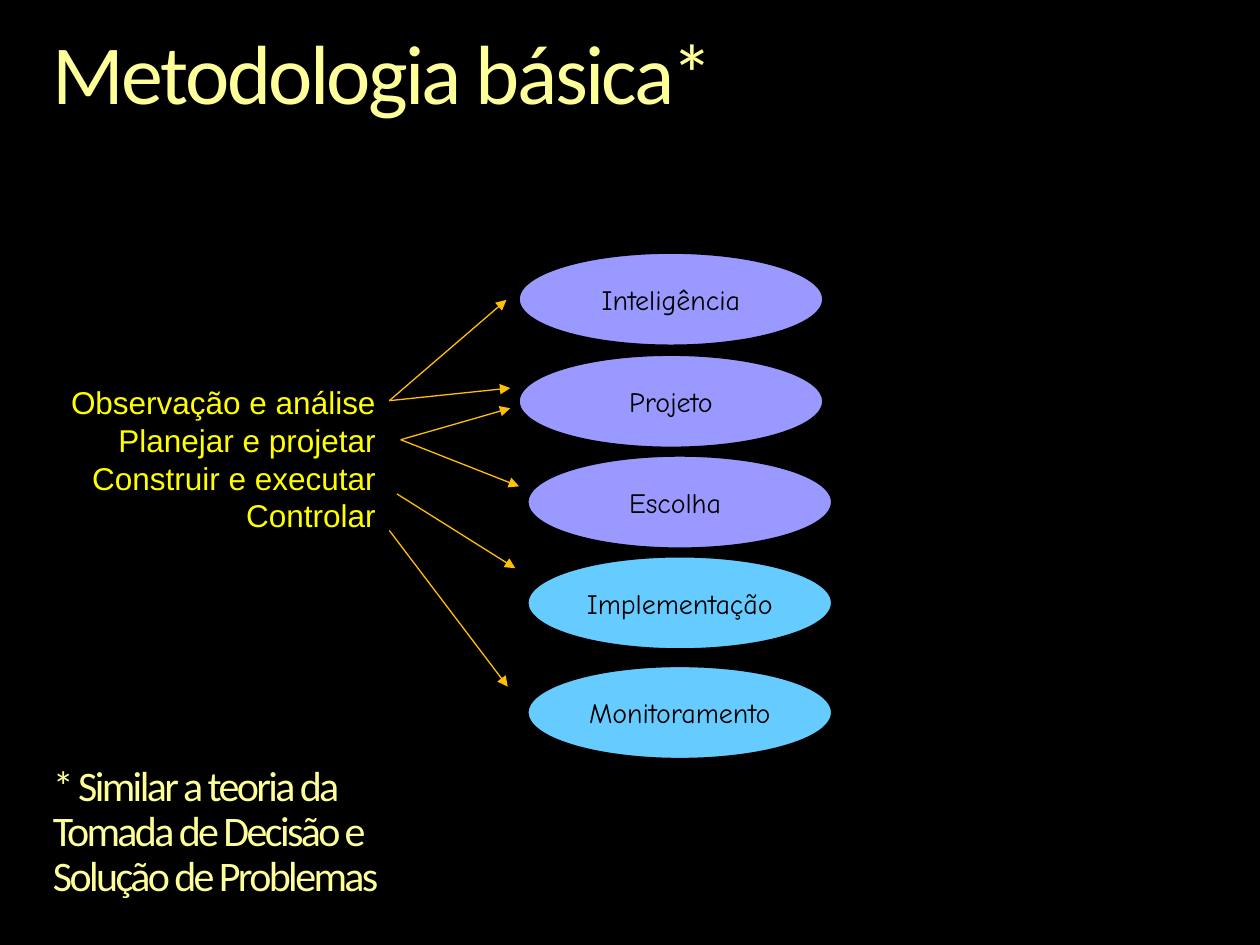
"""Build the "Metodologia básica" slide: activities linked to decision phases."""
from pptx import Presentation
from pptx.dml.color import RGBColor
from pptx.enum.shapes import MSO_CONNECTOR, MSO_SHAPE
from pptx.enum.text import MSO_ANCHOR, PP_ALIGN
from pptx.oxml.ns import qn
from pptx.util import Inches, Pt
from lxml.etree import SubElement

COLORS = {
    "background": "000000",
    "heading": "FFFF99",
    "activity": "FFFF00",
    "arrow": "FFC000",
    "decision": "9999FF",
    "action": "66CCFF",
    "ink": "000000",
}
TITLE = "Metodologia básica*"
FOOTNOTE = "* Similar a teoria da Tomada de Decisão e Solução de Problemas"
ACTIVITIES = [
    "Observação e análise",
    "Planejar e projetar",
    "Construir e executar",
    "Controlar",
]
LEFT_COL, RIGHT_COL = 4.12, 4.19
PHASES = [
    ("Inteligência", "decision", LEFT_COL, 2.01),
    ("Projeto", "decision", LEFT_COL, 2.82),
    ("Escolha ", "decision", RIGHT_COL, 3.62),
    ("Implementação", "action", RIGHT_COL, 4.42),
    ("Monitoramento", "action", RIGHT_COL, 5.29),
]
PHASE_SIZE = (2.41, 0.73)
ARROWS = [
    ((3.09, 3.18), [(4.02, 2.38), (4.05, 3.08)]),
    ((3.18, 3.49), [(4.05, 3.24), (4.12, 3.86)]),
    ((3.15, 3.92), [(4.09, 4.51)]),
    ((3.09, 4.21), [(4.03, 5.45)]),
]


def color(name):
    return RGBColor.from_string(COLORS[name])


def set_margins(tf, x, y):
    tf.margin_left = tf.margin_right = Inches(x)
    tf.margin_top = tf.margin_bottom = Inches(y)
    tf.word_wrap = True


def add_run(p, text, font, size, ink):
    r = p.add_run()
    r.text = text
    r.font.name, r.font.size = font, Pt(size)
    r.font.color.rgb = color(ink)
    return r


def add_heading(s, text, box, size):
    tf = s.shapes.add_textbox(*map(Inches, box)).text_frame
    set_margins(tf, 0, 0)
    p = tf.paragraphs[0]
    p.line_spacing = 0.9
    r = add_run(p, text, "Calibri", size, "heading")
    r.font._element.set("spc", "-150")


def add_activities(s):
    tf = s.shapes.add_textbox(*map(Inches, (0.4, 2.99, 2.68, 1.31))).text_frame
    set_margins(tf, 0.1, 0.05)
    for i, text in enumerate(ACTIVITIES):
        p = tf.add_paragraph() if i else tf.paragraphs[0]
        p.alignment = PP_ALIGN.RIGHT
        add_run(p, text, "Arial", 18, "activity")


def add_phase(s, text, fill, x, y):
    sp = s.shapes.add_shape(MSO_SHAPE.OVAL, *map(Inches, (x, y, *PHASE_SIZE)))
    sp.shadow.inherit = False
    sp.fill.solid()
    sp.fill.fore_color.rgb = color(fill)
    sp.line.color.rgb = color("ink")
    sp.line.width = Pt(0.75)
    tf = sp.text_frame
    set_margins(tf, 0.06, 0.03)
    tf.vertical_anchor = MSO_ANCHOR.MIDDLE
    p = tf.paragraphs[0]
    p.alignment = PP_ALIGN.CENTER
    add_run(p, text, "Comic Neue", 16, "ink")


def add_arrow(s, start, end):
    line = s.shapes.add_connector(MSO_CONNECTOR.STRAIGHT, *map(Inches, start + end))
    line.line.color.rgb = color("arrow")
    line.line.width = Pt(0.75)
    SubElement(line.line._get_or_add_ln(), qn("a:tailEnd"), type="triangle")
    SubElement(line._element.spPr, qn("a:effectLst"))


def main():
    prs = Presentation()
    prs.slide_width, prs.slide_height = Inches(10), Inches(7.5)
    s = prs.slides.add_slide(prs.slide_layouts[6])
    s.background.fill.solid()
    s.background.fill.fore_color.rgb = color("background")
    add_heading(s, TITLE, (0.42, 0.25, 9.17, 0.73), 48)
    for phase in PHASES:
        add_phase(s, *phase)
    add_heading(s, FOOTNOTE, (0.42, 6.07, 2.68, 1.09), 24)
    add_activities(s)
    for start, ends in ARROWS:
        for end in ends:
            add_arrow(s, start, end)
    prs.save("out.pptx")


if __name__ == "__main__":
    main()
